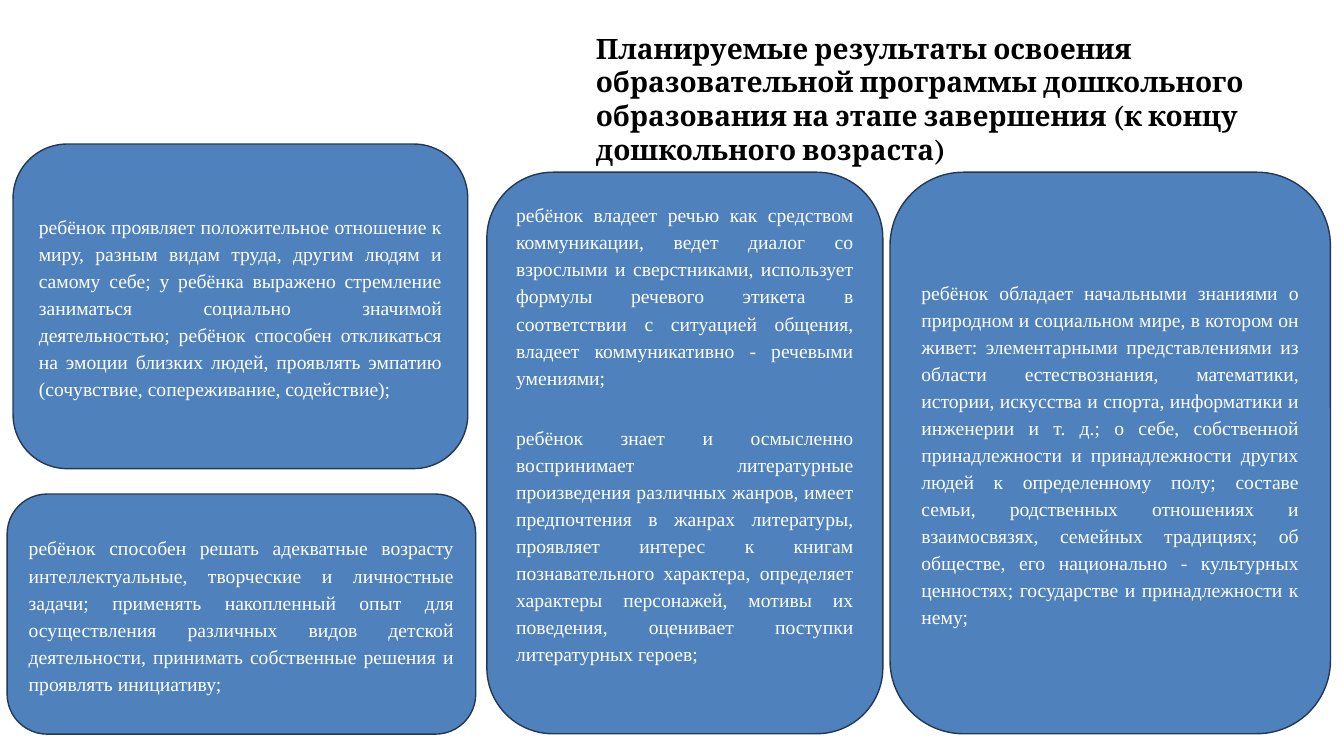
from dataclasses import dataclass

from pptx import Presentation
from pptx.dml.color import RGBColor
from pptx.enum.shapes import MSO_SHAPE
from pptx.enum.text import MSO_ANCHOR, MSO_AUTO_SIZE, PP_ALIGN
from pptx.util import Cm, Pt


@dataclass(frozen=True)
class Theme:
    title_font: str = "Cambria"
    body_font: str = "Times New Roman"
    title_size: int = 20
    body_size: int = 14
    title_color: str = "000000"
    body_color: str = "FFFFFF"
    card_fill: str = "4F81BD"
    card_line: str = "233953"


THEME = Theme()

TITLE = (
    "Планируемые результаты освоения образовательной программы дошкольного "
    "образования на этапе завершения (к концу дошкольного возраста)"
)
ATTITUDE = (
    "ребёнок проявляет положительное отношение к миру, разным видам труда, "
    "другим людям и самому себе; у ребёнка выражено стремление заниматься "
    "социально значимой деятельностью; ребёнок способен откликаться на эмоции "
    "близких людей, проявлять эмпатию (сочувствие, сопереживание, содействие);"
)
SPEECH = (
    "ребёнок владеет речью как средством коммуникации, ведет диалог со "
    "взрослыми и сверстниками, использует формулы речевого этикета в "
    "соответствии с ситуацией общения, владеет коммуникативно - речевыми умениями;"
)
LITERATURE = (
    "ребёнок знает и осмысленно воспринимает литературные произведения "
    "различных жанров, имеет предпочтения в жанрах литературы, проявляет "
    "интерес к книгам познавательного характера, определяет характеры "
    "персонажей, мотивы их поведения, оценивает поступки литературных героев;"
)
INITIATIVE = (
    "ребёнок способен решать адекватные возрасту интеллектуальные, творческие "
    "и личностные задачи; применять накопленный опыт для осуществления "
    "различных видов детской деятельности, принимать собственные решения и "
    "проявлять инициативу;"
)
KNOWLEDGE = (
    "ребёнок обладает начальными знаниями о природном и социальном мире, в "
    "котором он живет: элементарными представлениями из области "
    "естествознания, математики, истории, искусства и спорта, информатики и "
    "инженерии и т. д.; о себе, собственной принадлежности и принадлежности "
    "других людей к определенному полу; составе семьи, родственных отношениях "
    "и взаимосвязях, семейных традициях; об обществе, его национально - "
    "культурных ценностях; государстве и принадлежности к нему;"
)

COLUMN_TOP, COLUMN_HEIGHT = 4.34, 14.15
# Left, top, width, height and bottom inset in centimetres, then paragraphs
CARDS = [
    (0.33, 3.63, 11.46, 8.18, 0.13, [ATTITUDE]),
    (12.27, COLUMN_TOP, 9.98, COLUMN_HEIGHT, 1.14, [SPEECH, LITERATURE]),
    (0.18, 12.45, 11.81, 6.05, 0.13, [INITIATIVE]),
    (22.43, COLUMN_TOP, 11.1, COLUMN_HEIGHT, 0.13, [KNOWLEDGE]),
]


def apply_format(target, values):
    for name, value in values.items():
        setattr(target, name, value)


def format_font(font, name, size, color, bold=False):
    apply_format(font, {"name": name, "size": Pt(size), "bold": bold})
    font.color.rgb = RGBColor.from_string(color)


def add_title(slide):
    title = slide.shapes.title
    apply_format(title, {
        "left": Cm(14.76), "top": Cm(0.66), "width": Cm(18.77), "height": Cm(3.68),
    })
    apply_format(title.text_frame, {
        "text": TITLE,
        "word_wrap": True,
        "auto_size": MSO_AUTO_SIZE.NONE,
        "vertical_anchor": MSO_ANCHOR.TOP,
    })
    paragraph = title.text_frame.paragraphs[0]
    paragraph.alignment = PP_ALIGN.LEFT
    format_font(paragraph.font, THEME.title_font, THEME.title_size,
                THEME.title_color, bold=True)


def add_card(slide, left, top, width, height, bottom_inset, texts):
    """Add a rounded card with justified paragraphs."""
    card = slide.shapes.add_shape(
        MSO_SHAPE.ROUNDED_RECTANGLE, Cm(left), Cm(top), Cm(width), Cm(height))
    card.shadow.inherit = False
    card.fill.solid()
    card.fill.fore_color.rgb = RGBColor.from_string(THEME.card_fill)
    card.line.color.rgb = RGBColor.from_string(THEME.card_line)
    card.line.width = Pt(1)
    frame = card.text_frame
    apply_format(frame, {
        "text": "\n".join(texts),
        "word_wrap": True,
        "vertical_anchor": MSO_ANCHOR.MIDDLE,
        "margin_bottom": Cm(bottom_inset),
    })
    for index, paragraph in enumerate(frame.paragraphs):
        apply_format(paragraph, {
            "alignment": PP_ALIGN.JUSTIFY,
            "line_spacing": 1.15,
            "space_before": Pt(18 if index else 0),
            "space_after": Pt(6),
        })
        format_font(paragraph.font, THEME.body_font, THEME.body_size, THEME.body_color)


def main():
    presentation = Presentation()
    apply_format(presentation, {"slide_width": Cm(33.87), "slide_height": Cm(19.05)})
    slide = presentation.slides.add_slide(
        presentation.slide_layouts.get_by_name("Title Only"))
    add_title(slide)
    for card in CARDS:
        add_card(slide, *card)
    presentation.save("out.pptx")


if __name__ == "__main__":
    main()
